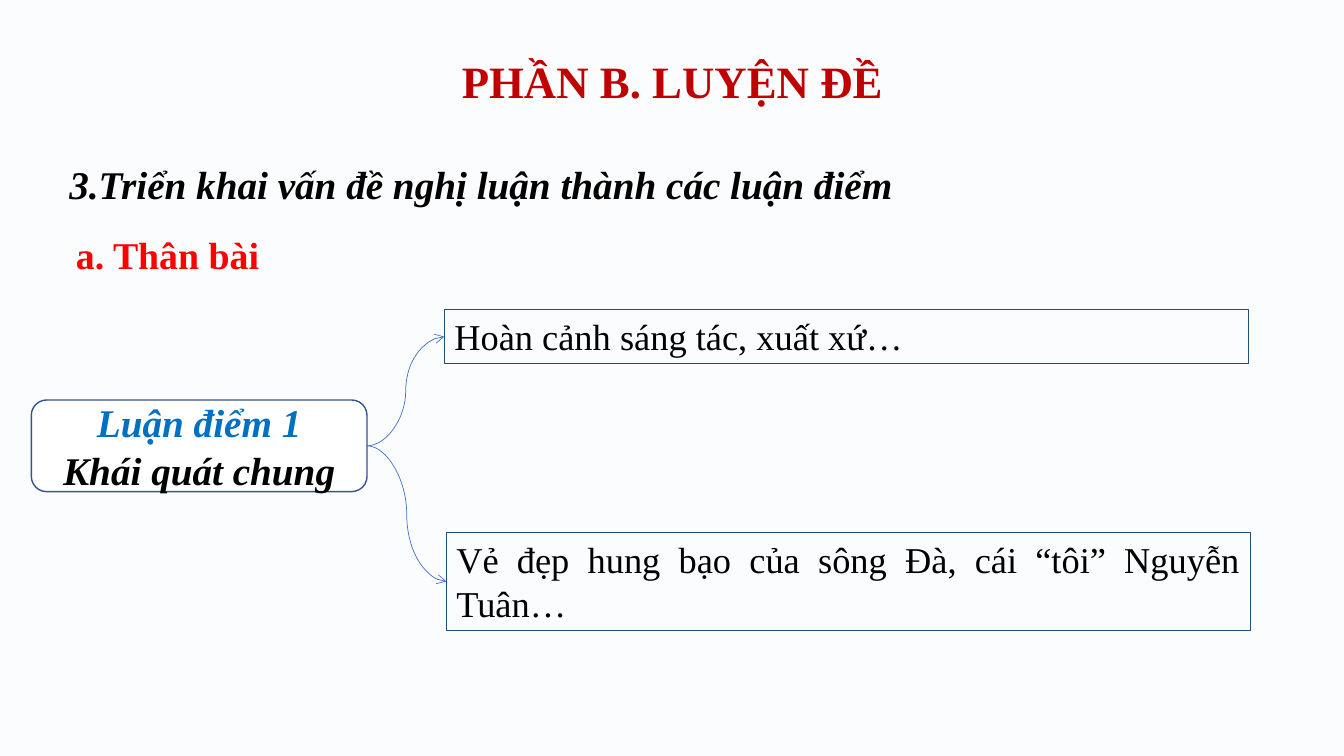
from lxml.etree import SubElement
from pptx import Presentation
from pptx.dml.color import RGBColor
from pptx.enum.shapes import MSO_CONNECTOR, MSO_SHAPE
from pptx.enum.text import MSO_ANCHOR, PP_ALIGN
from pptx.oxml.ns import qn
from pptx.util import Cm, Pt

PALE = RGBColor(0xFB, 0xFC, 0xFE)
WHITE = RGBColor(0xFF, 0xFF, 0xFF)
BLACK = RGBColor(0, 0, 0)
CRIMSON = RGBColor(0xC0, 0, 0)
RED = RGBColor(0xFF, 0, 0)
SKY = RGBColor(0, 0x70, 0xC0)
NAVY = RGBColor(0x1F, 0x4E, 0x79)
INDIGO = RGBColor(0x32, 0x54, 0x91)
BLUE = RGBColor(0x44, 0x72, 0xC4)
FONT = "Times New Roman"
MID, JUST = PP_ALIGN.CENTER, PP_ALIGN.JUSTIFY

# Content: lines of (text, colour); places are left, top, width, height in cm
TITLE = [("PHẦN B. LUYỆN ĐỀ", CRIMSON)]
HEAD = [("3.Triển khai vấn đề nghị luận thành các luận điểm", BLACK)]
PART = [("a. Thân bài", RED)]
POINT = [("Luận điểm 1", SKY), ("Khái quát chung", BLACK)]
IDEAS = [
    ("Hoàn cảnh sáng tác, xuất xứ…", (11.2, 7.8, 20.27, 1.37)),
    ("Vẻ đẹp hung bạo của sông Đà, cái “tôi” Nguyễn Tuân…",
     (11.25, 13.41, 20.27, 2.49)),
]

deck = Presentation()
deck.slide_width, deck.slide_height = Cm(33.87), Cm(19.05)
slide = deck.slides.add_slide(deck.slide_layouts[6])
slide.background.fill.solid()
slide.background.fill.fore_color.rgb = PALE


def write(shape, lines, size, align, bold=True, italic=False,
          space=1.0, anchor=MSO_ANCHOR.TOP, wrap=True):
    frame = shape.text_frame
    frame.word_wrap = wrap
    frame.vertical_anchor = anchor
    for i, (text, color) in enumerate(lines):
        para = frame.add_paragraph() if i else frame.paragraphs[0]
        para.alignment, para.line_spacing = align, space
        run = para.add_run()
        run.text = text
        font = run.font
        font.name, font.size = FONT, Pt(size)
        font.bold, font.italic = bold, italic
        font.color.rgb = color


def label(place, *args, **style):
    box = slide.shapes.add_textbox(*map(Cm, place))
    write(box, *args, **style)


def panel(kind, place, color, width, fill=None):
    box = slide.shapes.add_shape(kind, *map(Cm, place))
    box.shadow.inherit = False
    if fill is None:
        box.fill.background()
    else:
        box.fill.solid()
        box.fill.fore_color.rgb = fill
    box.line.color.rgb, box.line.width = color, Pt(width)
    return box


def join(start, end):
    # Right side of the start box to the left side of the end box
    link = slide.shapes.add_connector(MSO_CONNECTOR.CURVE, 0, 0, 0, 0)
    link.begin_connect(start, 3)
    link.end_connect(end, 1)
    link.line.color.rgb, link.line.width = BLUE, Pt(0.5)
    SubElement(link.line._get_or_add_ln(), qn("a:tailEnd"), type="arrow")
    SubElement(link._element.spPr, qn("a:effectLst"))


# Headings
label((2.34, 1.02, 29.21, 2.18), TITLE, 32, MID, space=0.9,
      anchor=MSO_ANCHOR.MIDDLE)
label((1.5, 3.33, 30.43, 1.83), HEAD, 28, JUST, italic=True, space=1.5)
label((1.63, 5.72, 5.18, 1.42), PART, 27, MID, wrap=False)

# Main point
point = panel(MSO_SHAPE.ROUNDED_RECTANGLE, (0.79, 10.08, 8.46, 2.31),
              INDIGO, 1, WHITE)
write(point, POINT, 28, MID, italic=True, anchor=MSO_ANCHOR.MIDDLE)

# Ideas, each joined to the main point
for text, place in IDEAS:
    idea = panel(MSO_SHAPE.RECTANGLE, place, NAVY, 0.75)
    write(idea, [(text, BLACK)], 26, JUST, bold=False)
    join(point, idea)

deck.save("out.pptx")
